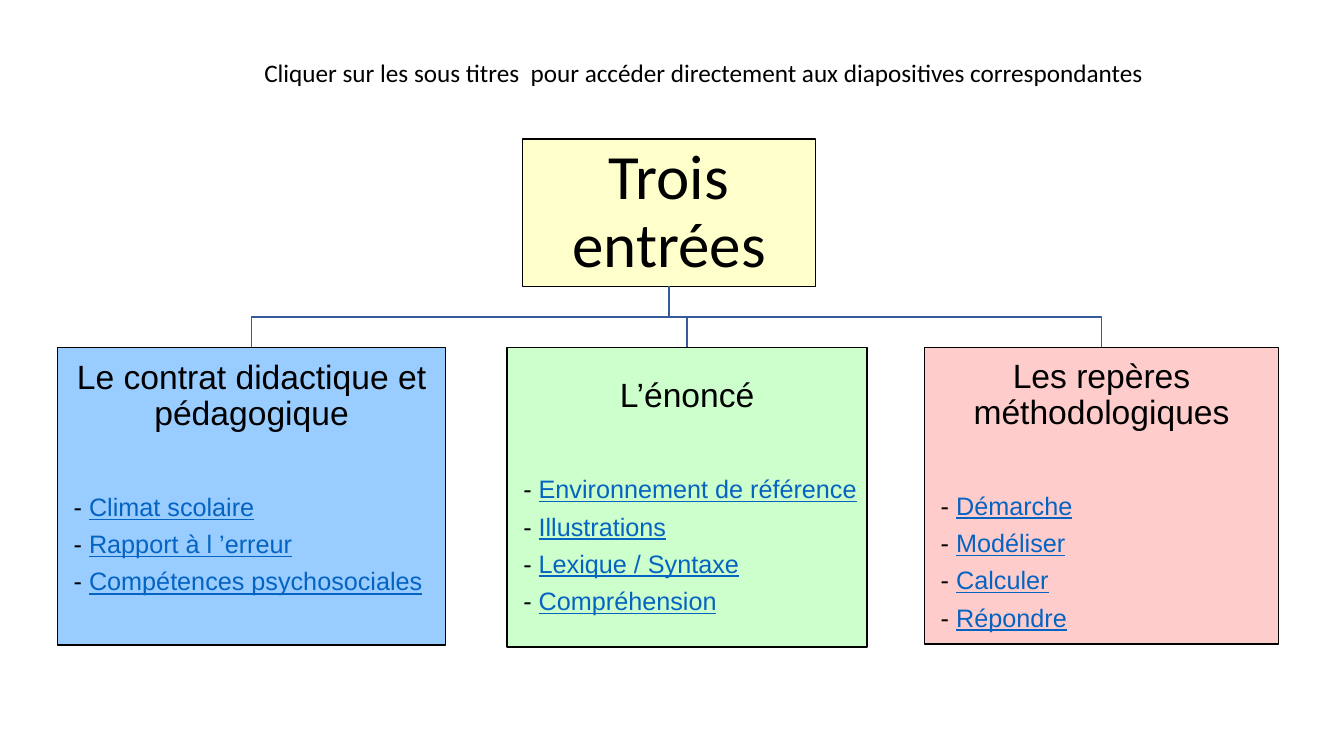
from dataclasses import dataclass

from pptx import Presentation
from pptx.dml.color import RGBColor
from pptx.enum.shapes import MSO_SHAPE
from pptx.enum.text import MSO_ANCHOR as Anchor, MSO_AUTO_SIZE as AutoSize, PP_ALIGN as Align
from pptx.util import Inches, Pt


@dataclass(frozen=True)
class Theme:
    ink: str = "000000"
    link: str = "0563C1"
    branch: str = "365B9D"
    root: str = "FFFFCC"
    root_font: str = "Calibri"
    entry_font: str = "Arial"
    root_size: float = 45
    heading_size: float = 24
    item_size: float = 18
    line_spacing: float = 0.9
    heading_gap: float = 44.2
    item_gap: float = 7.2


@dataclass(frozen=True)
class Entry:
    heading: str
    items: tuple[str, ...]
    left: float
    width: float
    height: float
    fill: str
    bottom_inset: float = 0.02


THEME = Theme()
ROOT_LEFT, ROOT_TOP, ROOT_WIDTH, ROOT_HEIGHT = 5.18, 1.38, 2.91, 1.46
ENTRY_TOP = 3.45
ENTRIES = (
    Entry("Le contrat didactique et pédagogique",
          ("Climat scolaire", "Rapport à l ’erreur", "Compétences psychosociales"),
          0.57, 3.85, 2.95, "99CCFF", bottom_inset=0.38),
    Entry("L’énoncé",
          ("Environnement de référence", "Illustrations", "Lexique / Syntaxe", "Compréhension"),
          5.03, 3.57, 2.97, "CCFFCC"),
    Entry("Les repères méthodologiques",
          ("Démarche", "Modéliser", "Calculer", "Répondre"),
          9.17, 3.51, 2.94, "FFCCCC"),
)


def add_span(para, text: str, *, size: float, font: str,
             color: str = THEME.ink, underline: bool = False) -> None:
    span = para.add_run()
    span.text = text
    span.font.size = Pt(size)
    span.font.name = font
    span.font.color.rgb = RGBColor.from_string(color)
    span.font.underline = underline


def set_para(para, *, align=Align.LEFT, after: float = 0,
             spacing: float = THEME.line_spacing) -> None:
    para.alignment = align
    para.line_spacing = spacing
    para.space_before = Pt(0)
    para.space_after = Pt(after)


def style_box(box, fill: str, inset: float, bottom_inset: float) -> None:
    box.fill.solid()
    box.fill.fore_color.rgb = RGBColor.from_string(fill)
    box.line.color.rgb = RGBColor.from_string(THEME.ink)
    box.line.width = Pt(1)
    frame = box.text_frame
    frame.word_wrap = True
    frame.auto_size = AutoSize.NONE
    frame.vertical_anchor = Anchor.MIDDLE
    frame.margin_left = frame.margin_right = frame.margin_top = Inches(inset)
    frame.margin_bottom = Inches(bottom_inset)


def add_branch(page, entry: Entry) -> None:
    start_x, end_x = ROOT_LEFT + ROOT_WIDTH / 2, entry.left + entry.width / 2
    start_y = ROOT_TOP + ROOT_HEIGHT
    middle_y = (start_y + ENTRY_TOP) / 2
    corners = ((start_x, middle_y), (end_x, middle_y), (end_x, ENTRY_TOP))
    builder = page.shapes.build_freeform(Inches(start_x), Inches(start_y))
    builder.add_line_segments([(Inches(x), Inches(y)) for x, y in corners], close=False)
    branch = builder.convert_to_shape()
    branch.shadow.inherit = False
    branch.fill.background()
    branch.line.color.rgb = RGBColor.from_string(THEME.branch)
    branch.line.width = Pt(1)


def add_entry(page, entry: Entry) -> None:
    box = page.shapes.add_shape(MSO_SHAPE.RECTANGLE, Inches(entry.left), Inches(ENTRY_TOP),
                                Inches(entry.width), Inches(entry.height))
    box.shadow.inherit = False
    style_box(box, entry.fill, 0.02, entry.bottom_inset)
    heading = box.text_frame.paragraphs[0]
    set_para(heading, align=Align.CENTER, after=THEME.heading_gap)
    add_span(heading, entry.heading, size=THEME.heading_size, font=THEME.entry_font)
    for item in entry.items:
        para = box.text_frame.add_paragraph()
        set_para(para, after=THEME.item_gap)
        para._p.get_or_add_pPr().set("marL", str(Inches(0.14)))
        add_span(para, "- ", size=THEME.item_size, font=THEME.entry_font)
        add_span(para, item, size=THEME.item_size, font=THEME.entry_font,
                 color=THEME.link, underline=True)


def main() -> None:
    deck = Presentation()
    deck.slide_width, deck.slide_height = Inches(13.33), Inches(7.5)
    page = deck.slides.add_slide(deck.slide_layouts[5])

    # Root of the tree
    root = page.shapes.title
    root.left, root.top = Inches(ROOT_LEFT), Inches(ROOT_TOP)
    root.width, root.height = Inches(ROOT_WIDTH), Inches(ROOT_HEIGHT)
    style_box(root, THEME.root, 0.03, 0.03)
    para = root.text_frame.paragraphs[0]
    set_para(para, align=Align.CENTER)
    add_span(para, "Trois entrées", size=THEME.root_size, font=THEME.root_font)

    # Branches and entries
    for entry in ENTRIES:
        add_branch(page, entry)
    for entry in ENTRIES:
        add_entry(page, entry)

    # Reading hint
    hint = page.shapes.add_textbox(Inches(1.96), Inches(0.52), Inches(10.04), Inches(0.4))
    hint.text_frame.word_wrap = True
    para = hint.text_frame.paragraphs[0]
    set_para(para, align=Align.CENTER, spacing=1.0)
    add_span(para, "Cliquer sur les sous titres  pour accéder directement aux diapositives correspondantes",
             size=THEME.item_size, font=THEME.root_font)

    deck.save("out.pptx")


if __name__ == "__main__":
    main()
